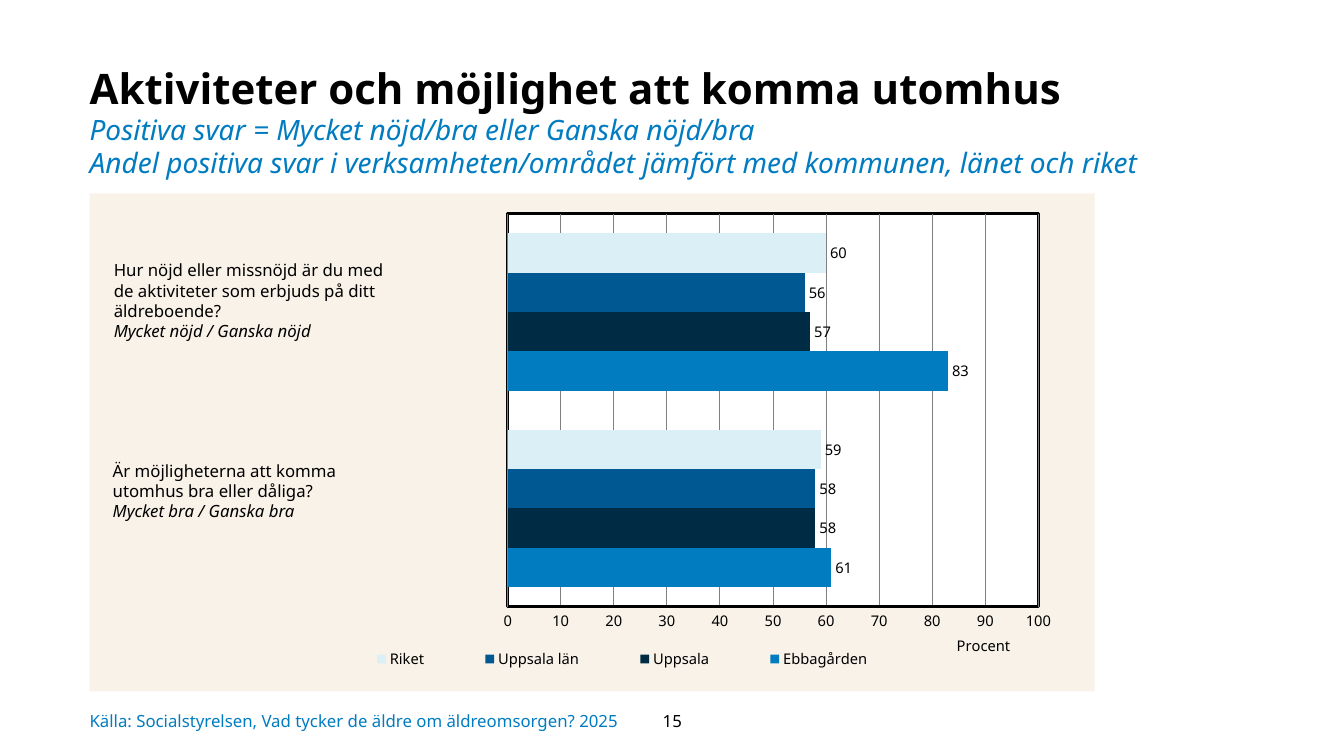
from lxml import etree
from pptx import Presentation
from pptx.chart.data import CategoryChartData
from pptx.dml.color import RGBColor
from pptx.enum.chart import XL_CHART_TYPE, XL_LABEL_POSITION, XL_LEGEND_POSITION, XL_TICK_MARK
from pptx.enum.text import MSO_ANCHOR, PP_ALIGN
from pptx.oxml import parse_xml
from pptx.oxml.ns import nsdecls, qn
from pptx.util import Pt

BARS = XL_CHART_TYPE.BAR_CLUSTERED
OUTSIDE = XL_LABEL_POSITION.OUTSIDE_END
BOTTOM = XL_LEGEND_POSITION.BOTTOM
NO_TICK = XL_TICK_MARK.NONE
TOP, MIDDLE = MSO_ANCHOR.TOP, MSO_ANCHOR.MIDDLE
LEFT, CENTER = PP_ALIGN.LEFT, PP_ALIGN.CENTER

BLACK = RGBColor(0x00, 0x00, 0x00)
WHITE = RGBColor(0xFF, 0xFF, 0xFF)
GREY = RGBColor(0x80, 0x80, 0x80)
CREAM = RGBColor(0xF8, 0xF2, 0xE8)
BLUE = RGBColor(0x01, 0x7C, 0xC1)
NAVY = RGBColor(0x00, 0x2B, 0x45)
DEEP = RGBColor(0x00, 0x58, 0x92)
PALE = RGBColor(0xDB, 0xF0, 0xF6)
FONT = "Noto Sans"

HEAD = dict(size=Pt(30), bold=True)
SUB = dict(size=Pt(20), italic=True, color=BLUE)
BODY = dict(size=Pt(12))
NOTE = dict(size=Pt(12), italic=True)
SOURCE = dict(size=Pt(12), color=BLUE)

INSET = (7.2, 3.6, 7.2, 3.6)
# box, insets, anchor, alignment, line spacing, paragraphs
TEXTS = [
    ((64, 46.8, 763, 91.4), (0, 0, 7.2, 3.6), TOP, LEFT, 0.97, [
        ("Aktiviteter och möjlighet att komma utomhus", HEAD),
        ("Positiva svar = Mycket nöjd/bra eller Ganska nöjd/bra", SUB),
        ("Andel positiva svar i verksamheten/området jämfört med kommunen, länet och riket", SUB)]),
    ((74.2, 182.2, 216, 78.5), INSET, TOP, LEFT, 1, [
        ("Hur nöjd eller missnöjd är du med de aktiviteter som erbjuds på ditt äldreboende?", BODY),
        ("Mycket nöjd / Ganska nöjd", NOTE)]),
    ((73.4, 325.4, 216.7, 63.4), INSET, TOP, LEFT, 1, [
        ("Är möjligheterna att komma utomhus bra eller dåliga?", BODY),
        ("Mycket bra / Ganska bra", NOTE)]),
    ((64, 500.4, 646, 28.8), (0, 0, 0, 0), MIDDLE, LEFT, 1, [
        ("Källa: Socialstyrelsen, Vad tycker de äldre om äldreomsorgen? 2025", SOURCE)]),
    ((443.5, 500.4, 73.4, 28.8), INSET, MIDDLE, CENTER, 1, [("15", BODY)]),
]

CHART_BOX = (64, 138.2, 718, 355.7)
SERIES = [
    ("Ebbagården", (61, 83), BLUE),
    ("Uppsala", (58, 57), NAVY),
    ("Uppsala län", (58, 56), DEEP),
    ("Riket", (59, 60), PALE),
]
PLOT = dict(layoutTarget="inner", xMode="edge", yMode="edge", x=0.416, y=0.041, w=0.528, h=0.789)
LEGEND = dict(xMode="edge", yMode="edge", x=0.23, y=0.9, w=0.6, h=0.07)
UNIT = dict(xMode="edge", yMode="edge", x=0.86, y=0.88)


def style(font, color=BLACK, **values):
    font.name = FONT
    font.color.rgb = color
    for name, value in values.items():
        setattr(font, name, value)


def add_text(slide, box, inset, anchor, align, space, paras):
    frame = slide.shapes.add_textbox(*map(Pt, box)).text_frame
    frame.word_wrap = True
    frame.vertical_anchor = anchor
    for side, gap in zip(("left", "top", "right", "bottom"), inset):
        setattr(frame, "margin_" + side, Pt(gap))
    for i, (text, look) in enumerate(paras):
        para = frame.paragraphs[0] if i == 0 else frame.add_paragraph()
        para.alignment = align
        para.line_spacing = space
        run = para.add_run()
        run.text = text
        style(run.font, **look)


def place(part, after, values):
    """Give a chart part a manual layout, put behind its child `after`."""
    for old in part.findall(qn("c:layout")):
        part.remove(old)
    layout = etree.Element(qn("c:layout"))
    manual = etree.SubElement(layout, qn("c:manualLayout"))
    for name, value in values.items():
        etree.SubElement(manual, qn("c:" + name)).set("val", str(value))
    if after is None:
        part.insert(0, layout)
    else:
        part.find(qn(after)).addnext(layout)


def fill_xml(color, line):
    return parse_xml(
        f'<c:spPr {nsdecls("c", "a")}><a:solidFill><a:srgbClr val="{color}"/></a:solidFill>{line}</c:spPr>')


def add_bars(slide):
    data = CategoryChartData()
    data.categories = ["1", "2"]
    for name, vals, _ in SERIES:
        data.add_series(name, vals)
    chart = slide.shapes.add_chart(BARS, *map(Pt, CHART_BOX), data).chart
    style(chart.font, size=Pt(10.5))
    chart.has_title = False
    plot = chart.plots[0]
    plot.gap_width, plot.overlap, plot.vary_by_categories = 100, 0, False
    for series, (_, _, color) in zip(plot.series, SERIES):
        series.format.fill.solid()
        series.format.fill.fore_color.rgb = color
        labels = series.data_labels
        labels.show_value = True
        labels.position = OUTSIDE
        style(labels.font, size=Pt(10.5))

    chart.category_axis.visible = False
    axis = chart.value_axis
    axis.minimum_scale, axis.maximum_scale, axis.major_unit = 0, 100, 10
    axis.major_tick_mark = axis.minor_tick_mark = NO_TICK
    axis.format.line.color.rgb = BLACK
    axis.format.line.width = Pt(2)
    grid = axis.major_gridlines.format.line
    grid.color.rgb, grid.width = GREY, Pt(0.75)
    style(axis.tick_labels.font, size=Pt(10.5))
    title = axis.axis_title
    title.text_frame.text = "Procent"
    style(title.text_frame.paragraphs[0].runs[0].font, size=Pt(10.5), bold=False)
    place(title._element, "c:tx", UNIT)

    chart.has_legend = True
    legend = chart.legend
    legend.position = BOTTOM
    legend.include_in_layout = False
    style(legend.font, size=Pt(10.5))
    place(legend._element, "c:legendPos", LEGEND)

    space = chart._chartSpace
    area = space.chart.plotArea
    place(area, None, PLOT)
    edge = f'<a:ln w="{Pt(2)}"><a:solidFill><a:srgbClr val="{BLACK}"/></a:solidFill></a:ln>'
    area.append(fill_xml(WHITE, edge))
    space.chart.addnext(fill_xml(CREAM, "<a:ln><a:noFill/></a:ln>"))


def main():
    deck = Presentation()
    deck.slide_width, deck.slide_height = Pt(960), Pt(540)
    slide = deck.slides.add_slide(deck.slide_layouts[6])
    add_bars(slide)
    for item in TEXTS:
        add_text(slide, *item)
    deck.save("out.pptx")


if __name__ == "__main__":
    main()
